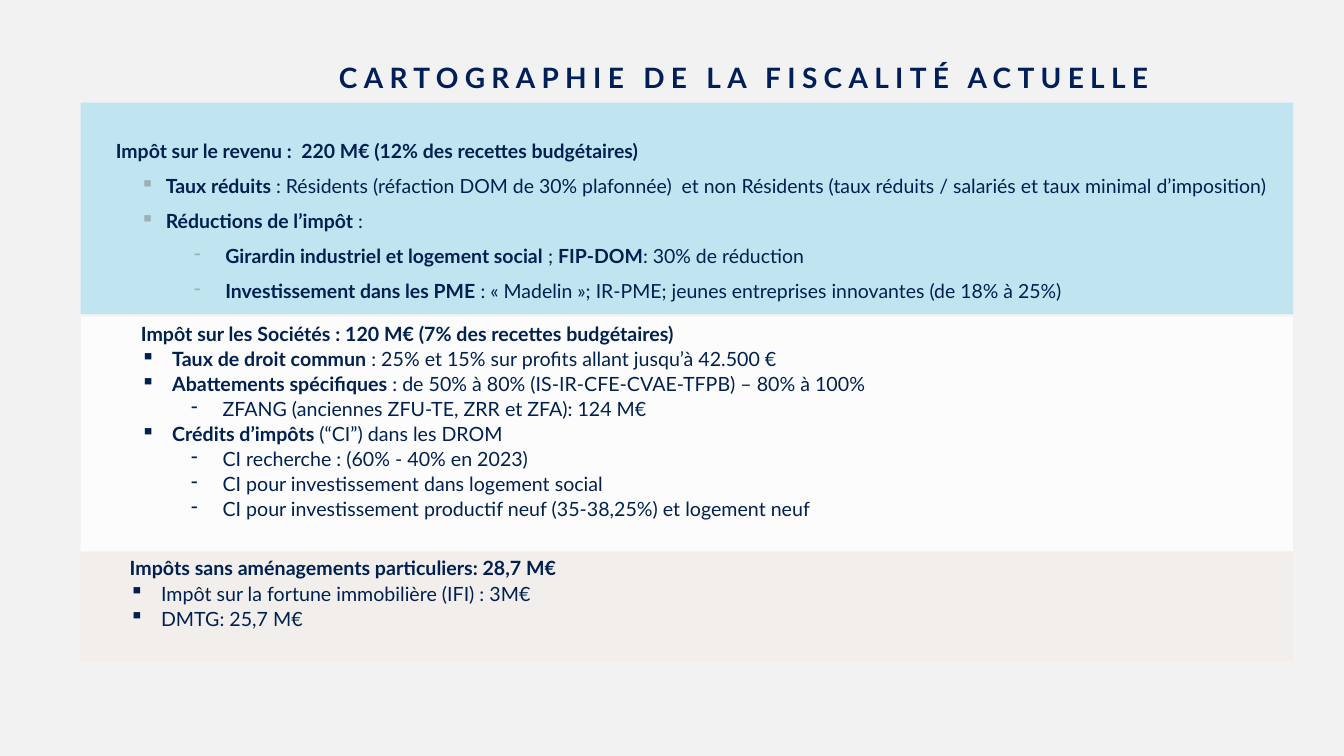
from lxml.etree import SubElement
from pptx import Presentation
from pptx.dml.color import RGBColor
from pptx.enum.shapes import MSO_SHAPE as Shape
from pptx.enum.text import MSO_ANCHOR as Anchor, MSO_AUTO_SIZE as AutoSize, PP_ALIGN as Align
from pptx.oxml.ns import qn
from pptx.util import Cm, Pt

COLORS = {
    "background": "F2F2F2", "text": "00204F", "title": "001E58", "bullet": "9BAFB5",
    "income": "00B0F0", "companies": "FFFFFF", "other": "F5E0D5",
}
LEFT, WIDTH = Cm(2.03), Cm(30.56)


def apply(target, formats):
    for key, value in formats.items():
        setattr(target, key, value)


class FiscalSlide:
    """Holds the text style and the slide being filled."""

    def __init__(self, deck, font="Lato"):
        self.font = font
        self.slide = deck.slides.add_slide(deck.slide_layouts[5])
        fill = self.slide.background.fill
        fill.solid()
        fill.fore_color.rgb = RGBColor.from_string(COLORS["background"])

    def run(self, paragraph, text, size, bold, color="text"):
        run = paragraph.add_run()
        run.text = text
        apply(run.font, {"name": self.font, "size": Pt(size), "bold": bold})
        run.font.color.rgb = RGBColor.from_string(COLORS[color])
        return run

    def indent(self, paragraph, margin, hang=0, bullet=None, bullet_color=None):
        props = paragraph._p.get_or_add_pPr()
        props.set("marL", str(Cm(margin)))
        props.set("indent", str(-Cm(hang)))
        if bullet_color and bullet:
            holder = SubElement(props, qn("a:buClr"))
            SubElement(holder, qn("a:srgbClr"), val=COLORS[bullet_color])
        if bullet:
            SubElement(props, qn("a:buChar"), char=bullet)
        else:
            SubElement(props, qn("a:buNone"))

    def title(self, text, top, height):
        title = self.slide.shapes.title
        apply(title, {"left": LEFT, "top": top, "width": WIDTH, "height": height})
        frame = title.text_frame
        inset = Cm(0.51)
        apply(frame, {
            "word_wrap": True, "auto_size": AutoSize.NONE, "vertical_anchor": Anchor.MIDDLE,
            "margin_left": inset, "margin_right": inset,
            "margin_top": inset, "margin_bottom": inset,
        })
        heading = frame.paragraphs[0]
        self.indent(heading, 3.2)
        apply(heading, {"alignment": Align.CENTER, "space_before": Pt(0), "space_after": Pt(6)})
        run = self.run(heading, text, 20, True, "title")
        run._r.get_or_add_rPr().set("spc", "450")

    def panel(self, top, height, color, opacity, levels, lines, size=14,
              spacing=1.0, before=1.1, inset=0.13, bullet_color=None):
        """Draws a tinted band; asterisks in its lines switch bold on and off."""
        panel = self.slide.shapes.add_shape(Shape.RECTANGLE, LEFT, Cm(top), WIDTH, Cm(height))
        panel.shadow.inherit = False
        panel.line.fill.background()
        panel.fill.solid()
        panel.fill.fore_color.rgb = RGBColor.from_string(COLORS[color])
        tint = panel._element.spPr.find(".//" + qn("a:srgbClr"))
        SubElement(tint, qn("a:alpha"), val=str(opacity * 1000))
        frame = panel.text_frame
        apply(frame, {"word_wrap": True, "vertical_anchor": Anchor.TOP, "margin_top": Cm(inset)})
        for index, (level, text) in enumerate(lines):
            paragraph = frame.add_paragraph() if index else frame.paragraphs[0]
            self.indent(paragraph, *levels[level], bullet_color=bullet_color)
            apply(paragraph, {
                "alignment": Align.LEFT, "level": max(level - 1, 0), "line_spacing": spacing,
                "space_before": Pt(before if index else 0),
            })
            for part, words in enumerate(text.split("*")):
                if words:
                    self.run(paragraph, words, size, part % 2 == 1)


def main():
    deck = Presentation()
    apply(deck, {"slide_width": Cm(33.87), "slide_height": Cm(19.05)})
    page = FiscalSlide(deck)
    page.title("CARTOGRAPHIE DE LA FISCALITÉ ACTUELLE ", Cm(1.04), Cm(1.83))
    page.panel(
        2.59, 5.33, "income", 20,
        [(0.64,), (1.9, 0.64, "▪"), (3.4, 0.79, "-")],
        [
            (0, "*Impôt sur le revenu :  220 M€ (12% des recettes budgétaires)*"),
            (1, "*Taux réduits *: Résidents (réfaction DOM de 30% plafonnée)  et non Résidents "
                "(taux réduits / salariés et taux minimal d’imposition)"),
            (1, "*Réductions de l’impôt *:"),
            (2, "*Girardin industriel et logement social *; *FIP-DOM*: 30% de réduction"),
            (2, "*Investissement dans les PME *: « Madelin »; IR-PME; "
                "jeunes entreprises innovantes (de 18% à 25%)"),
        ],
        size=13.9, spacing=0.9, before=10, inset=0.97, bullet_color="bullet")
    page.panel(
        7.98, 5.92, "companies", 79,
        [(1.27,), (2.06, 0.79, "▪"), (3.33, 0.79, "-")],
        [
            (0, "*Impôt sur les Sociétés : 120 M€ (7% des recettes budgétaires)*"),
            (1, "*Taux de droit commun *: 25% et 15% sur profits allant jusqu’à 42.500 €"),
            (1, "*Abattements spécifiques *: de 50% à 80% (IS-IR-CFE-CVAE-TFPB) – 80% à 100%"),
            (2, "ZFANG (anciennes ZFU-TE, ZRR et ZFA): 124 M€"),
            (1, "*Crédits d’impôts *(“CI”) dans les DROM"),
            (2, "CI recherche : (60% - 40% en 2023)"),
            (2, "CI pour investissement dans logement social"),
            (2, "CI pour investissement productif neuf (35-38,25%) et logement neuf"),
        ])
    page.panel(
        13.89, 2.77, "other", 20,
        [(0.99,), (1.78, 0.79, "▪")],
        [
            (0, "*Impôts sans aménagements particuliers: 28,7 M€*"),
            (1, "Impôt sur la fortune immobilière (IFI) : 3M€"),
            (1, "DMTG: 25,7 M€"),
        ])
    deck.save("out.pptx")


if __name__ == "__main__":
    main()
